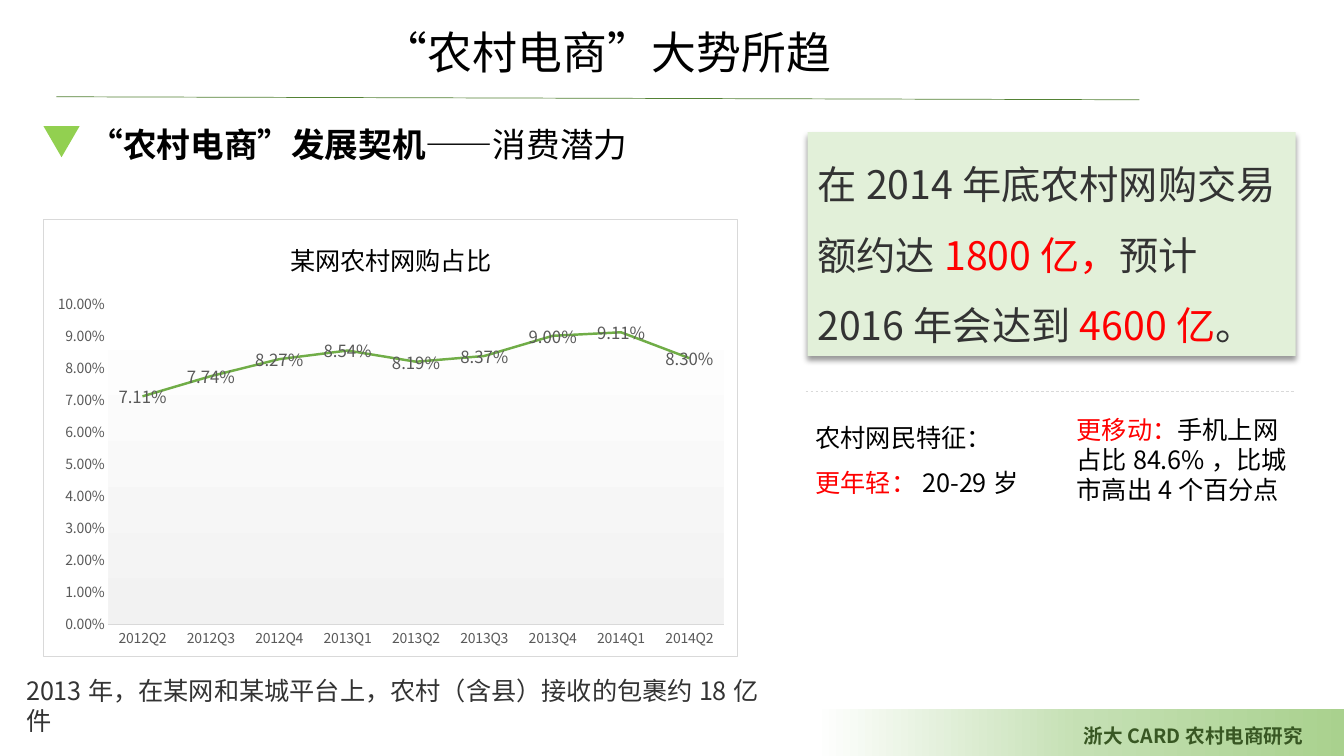
from dataclasses import dataclass

from pptx import Presentation
from pptx.chart.data import CategoryChartData as ChartData
from pptx.dml.color import RGBColor as Rgb
from pptx.enum.chart import XL_CHART_TYPE as Chart, XL_LABEL_POSITION as Spot
from pptx.enum.chart import XL_TICK_MARK as Tick
from pptx.enum.dml import MSO_LINE as Dash
from pptx.enum.shapes import MSO_CONNECTOR as Link, MSO_SHAPE as Form
from pptx.enum.text import MSO_ANCHOR as Anchor, MSO_AUTO_SIZE as Fit, PP_ALIGN as Align
from pptx.oxml import parse_xml
from pptx.oxml.ns import nsdecls, qn
from pptx.util import Inches, Pt


@dataclass(frozen=True)
class Theme:
    font: str = "Noto Sans CJK SC"
    black: str = "000000"
    dark: str = "333333"
    gray: str = "595959"
    rule: str = "D9D9D9"
    white: str = "FFFFFF"
    pale: str = "F2F2F2"
    red: str = "FF0000"
    mint: str = "E2F0D9"
    lime: str = "92D050"
    leaf: str = "70AD47"
    moss: str = "548235"
    deep: str = "385723"
    fade: tuple = ((0, "A9D18E"), (50, "C5E0B4"), (100, "FFFFFF"))
    title: int = 32
    lead: int = 28
    head: int = 24
    body: int = 18
    foot: int = 14
    label: int = 12
    axis: int = 10


T = Theme()
SHARES = {
    "2012Q2": 0.0711, "2012Q3": 0.0774, "2012Q4": 0.0827,
    "2013Q1": 0.0854, "2013Q2": 0.0819, "2013Q3": 0.0837,
    "2013Q4": 0.09, "2014Q1": 0.0911, "2014Q2": 0.083,
}


def assign(item, values):
    for name, value in values.items():
        setattr(item, name, value)


def style(font, size, color, bold=False):
    """Set a font for Latin and East Asian letters alike."""
    assign(font, {"size": Pt(size), "bold": bold, "name": T.font})
    font.color.rgb = Rgb.from_string(color)
    rpr = font._element
    rpr.find(qn("a:latin")).addnext(
        parse_xml(f'<a:ea {nsdecls("a")} typeface="{T.font}"/>'))


def blend(stops, angle):
    marks = "".join(
        f'<a:gs pos="{spot * 1000}"><a:srgbClr val="{color}"/></a:gs>'
        for spot, color in stops)
    return (f'<a:gradFill {nsdecls("a")} rotWithShape="1"><a:gsLst>{marks}</a:gsLst>'
            f'<a:lin ang="{angle * 60000}" scaled="0"/></a:gradFill>')


def write(shape, paras, size, align=Align.LEFT, gap=1.0):
    """Fill a shape with paragraphs of (text, color[, bold]) runs."""
    frame = shape.text_frame
    assign(frame, {"word_wrap": True, "auto_size": Fit.SHAPE_TO_FIT_TEXT,
                   "vertical_anchor": Anchor.TOP})
    for index, runs in enumerate(paras):
        para = frame.add_paragraph() if index else frame.paragraphs[0]
        assign(para, {"alignment": align, "line_spacing": gap})
        for text, *look in runs:
            run = para.add_run()
            run.text = text
            style(run.font, size, *look)


def add_text(slide, box, paras, size, **layout):
    write(slide.shapes.add_textbox(*map(Inches, box)), paras, size, **layout)


def add_form(slide, form, box, color=None):
    shape = slide.shapes.add_shape(form, *map(Inches, box))
    shape.shadow.inherit = False
    shape.line.fill.background()
    if color:
        shape.fill.solid()
        shape.fill.fore_color.rgb = Rgb.from_string(color)
    return shape


def add_rule(slide, start, end, color, dash=None):
    rule = slide.shapes.add_connector(Link.STRAIGHT, *map(Inches, start + end))
    rule.line.color.rgb = Rgb.from_string(color)
    assign(rule.line, {"width": Pt(0.5), "dash_style": dash})
    rule._element.spPr.append(parse_xml(f'<a:effectLst {nsdecls("a")}/>'))


def add_band(slide):
    band = add_form(slide, Form.RECTANGLE, (8.08, 7.03, 5.26, 0.47))
    band.fill.background()
    props = band._element.spPr
    props.replace(props.find(qn("a:noFill")), parse_xml(blend(T.fade, 180)))


def add_card(slide, box, paras):
    card = add_form(slide, Form.RECTANGLE, box, T.mint)
    card._element.spPr.find(qn("a:effectLst")).append(parse_xml(
        f'<a:outerShdw {nsdecls("a")} blurRad="{Pt(4)}" dist="{Pt(3)}" dir="5400000" '
        'rotWithShape="0"><a:srgbClr val="000000"><a:alpha val="40000"/>'
        '</a:srgbClr></a:outerShdw>'))
    write(card, paras, T.lead, gap=1.5)


def add_backs(chart):
    """Paint the chart frame and the plot behind the line."""
    def props(inner):
        return parse_xml(f'<c:spPr {nsdecls("c", "a")}>{inner}</c:spPr>')

    root = chart._chartSpace.find(qn("c:chart"))
    root.addnext(props(
        f'<a:solidFill><a:srgbClr val="{T.white}"/></a:solidFill>'
        f'<a:ln w="{Pt(0.75)}"><a:solidFill><a:srgbClr val="{T.rule}"/></a:solidFill></a:ln>'))
    root.find(qn("c:plotArea")).append(
        props(blend(((0, T.white), (100, T.pale)), 90)))


def add_chart(slide, box, title):
    data = ChartData(number_format="0.00%")
    data.categories = list(SHARES)
    data.add_series("占比", list(SHARES.values()))
    chart = slide.shapes.add_chart(Chart.LINE, *map(Inches, box), data).chart
    assign(chart, {"has_legend": False, "has_title": True})
    style(chart.font, T.axis, T.black)
    chart.chart_title.include_in_layout = False
    run = chart.chart_title.text_frame.paragraphs[0].add_run()
    run.text = title
    style(run.font, T.body, T.black)

    for axis in (chart.category_axis, chart.value_axis):
        assign(axis, {"has_major_gridlines": False, "major_tick_mark": Tick.NONE,
                      "minor_tick_mark": Tick.NONE})
        style(axis.tick_labels.font, T.axis, T.gray)
    edge = chart.category_axis.format.line
    edge.color.rgb = Rgb.from_string(T.rule)
    edge.width = Pt(0.75)
    assign(chart.value_axis, {"minimum_scale": 0, "maximum_scale": 0.1, "major_unit": 0.01})
    chart.value_axis.format.line.fill.background()
    percent = {"number_format": "0.00%", "number_format_is_linked": False}
    assign(chart.value_axis.tick_labels, percent)

    plot = chart.plots[0]
    plot.vary_by_categories = False
    series = plot.series[0]
    series.smooth = False
    series.format.line.color.rgb = Rgb.from_string(T.leaf)
    series.format.line.width = Pt(1.75)
    labels = series.data_labels
    assign(labels, {"show_value": True, "position": Spot.CENTER, **percent})
    style(labels.font, T.label, T.gray)
    add_backs(chart)


def main():
    deck = Presentation()
    assign(deck, {"slide_width": Inches(13.33), "slide_height": Inches(7.5)})
    slide = deck.slides.add_slide(deck.slide_layouts[6])

    add_band(slide)
    add_text(slide, (10.65, 7.13, 2.69, 0.34),
             [[("浙大CARD农村电商研究", T.deep, True)]], T.foot, align=Align.JUSTIFY)
    add_rule(slide, (0.56, 0.96), (11.3, 0.99), T.moss)
    add_text(slide, (3.7, 0.2, 5.36, 0.64),
             [[("“农村电商”大势所趋", T.black)]], T.title, align=Align.JUSTIFY)
    add_text(slide, (0.79, 1.18, 6.19, 0.5),
             [[("“农村电商”发展契机", T.black, True), ("——消费潜力", T.black)]], T.head)
    marker = add_form(slide, Form.ISOSCELES_TRIANGLE, (0.43, 1.25, 0.36, 0.31), T.lime)
    marker.rotation = 180

    add_chart(slide, (0.43, 2.17, 6.89, 4.35), "某网农村网购占比")
    add_card(slide, (8.01, 1.31, 4.84, 2.22), [[
        ("在2014年底农村网购交易额约达", T.dark), ("1800亿，", T.red),
        ("预计2016年会达到", T.dark), ("4600亿", T.red), ("。", T.dark)]])
    add_text(slide, (7.99, 3.99, 2.24, 1.01),
             [[("农村网民特征：", T.black)],
              [("更年轻：", T.red), ("20-29岁", T.black)]], T.body, gap=1.5)
    add_text(slide, (10.58, 4.06, 2.44, 1.01),
             [[("更移动：", T.red),
               ("手机上网占比84.6%，比城市高出4个百分点", T.black)]], T.body)
    add_rule(slide, (7.99, 3.88), (12.85, 3.88), T.rule, Dash.DASH)
    add_text(slide, (0.16, 6.65, 7.58, 0.4),
             [[("2013年，在某网和某城平台上，农村（含县）接收的包裹约18亿件", T.dark)]], T.body)
    deck.save("out.pptx")


if __name__ == "__main__":
    main()
